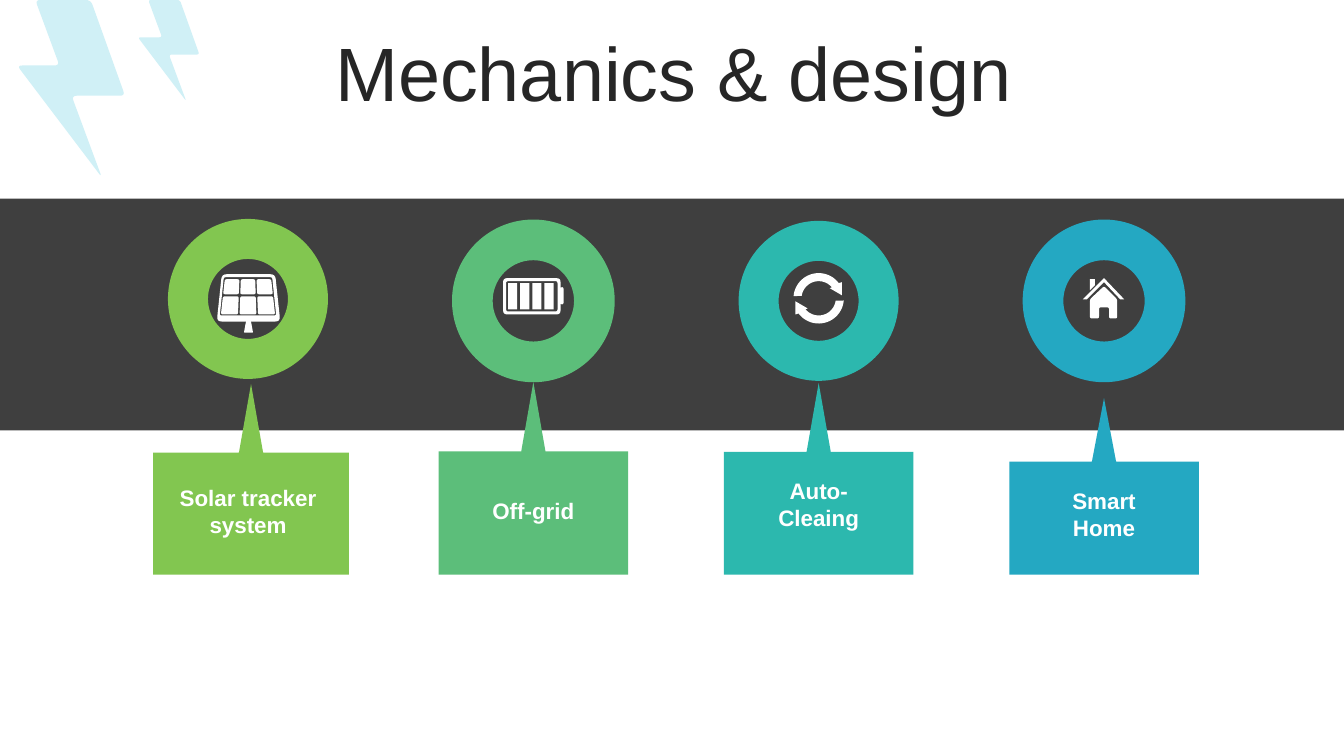
from math import cos, dist, radians, sin

from lxml import etree
from pptx import Presentation
from pptx.chart.data import CategoryChartData
from pptx.dml.color import RGBColor
from pptx.enum.chart import XL_CHART_TYPE
from pptx.enum.shapes import MSO_SHAPE
from pptx.enum.text import MSO_ANCHOR, MSO_AUTO_SIZE, PP_ALIGN
from pptx.oxml.ns import qn
from pptx.util import Inches, Pt

RING = XL_CHART_TYPE.DOUGHNUT
RECT = MSO_SHAPE.RECTANGLE
MIDDLE = MSO_ANCHOR.MIDDLE
GROW = MSO_AUTO_SIZE.SHAPE_TO_FIT_TEXT
CENTER = PP_ALIGN.CENTER

COLORS = {
    "bolt": "D0F0F6", "ink": "262626", "band": "3F3F3F", "white": "FFFFFF",
    "gray": "BFBFBF", "black": "000000", "lime": "82C650", "green": "5CBE7A",
    "teal": "2CB8AE", "blue": "24A8C2",
}
STEP = 2.83
FLOOR = 5.7


def put(target, values):
    for name, value in values.items():
        setattr(target, name, value)


def box(left, top, right, bottom):
    return [(left, top), (right, top), (right, bottom), (left, bottom)]


def bend(points, size):
    if not size:
        return points
    curve = []
    for i, (x, y) in enumerate(points):
        ends = []
        for px, py in (points[i - 1], points[(i + 1) % len(points)]):
            gap = dist((x, y), (px, py))
            part = min(size, gap / 2) / gap
            ends.append((x + (px - x) * part, y + (py - y) * part))
        (ax, ay), (bx, by) = ends
        for k in range(5):
            t = k / 4
            s = 1 - t
            curve.append((s * s * ax + 2 * s * t * x + t * t * bx,
                          s * s * ay + 2 * s * t * y + t * t * by))
    return curve


class Deck:
    font = "Arial"

    def __init__(self, show):
        self.slide = show.slides.add_slide(show.slide_layouts[6])
        self.shapes = self.slide.shapes

    def color(self, name):
        return RGBColor.from_string(COLORS[name])

    def paint(self, shape, name):
        shape.shadow.inherit = False
        shape.fill.solid()
        shape.fill.fore_color.rgb = self.color(name)
        shape.line.fill.background()

    def band(self, left, top, width, height, name):
        shape = self.shapes.add_shape(
            RECT, Inches(left), Inches(top), Inches(width), Inches(height))
        self.paint(shape, name)

    def outline(self, loops, name):
        pen = None
        for points, size in loops:
            spots = [(Inches(x), Inches(y)) for x, y in bend(points, size)]
            if pen:
                pen.move_to(*spots[0])
            else:
                pen = self.shapes.build_freeform(*spots[0])
            pen.add_line_segments(spots[1:], close=True)
        self.paint(pen.convert_to_shape(), name)

    def text(self, words, left, top, width, height, size, name, bold=False,
             form=None, frame=None):
        area = self.shapes.add_textbox(
            Inches(left), Inches(top), Inches(width), Inches(height)).text_frame
        put(area, {"word_wrap": True, "vertical_anchor": MIDDLE, **(frame or {})})
        line = area.paragraphs[0]
        put(line, {"alignment": CENTER, **(form or {})})
        run = line.add_run()
        run.text = words
        put(run.font, {"name": self.font, "size": Pt(size), "bold": bold})
        run.font.color.rgb = self.color(name)

    def ring(self, left, name, inset):
        data = CategoryChartData()
        data.categories = ["1", "2", "3"]
        data.add_series("Series 1", (100, 0, 0))
        chart = self.shapes.add_chart(
            RING, Inches(left), Inches(2.04), Inches(1.94), Inches(1.89), data).chart
        put(chart, {"has_legend": False, "has_title": False})
        put(chart.font, {"name": self.font, "size": Pt(18)})
        chart.font.color.rgb = self.color("black")
        plot = chart.plots[0]
        plot.vary_by_categories = True
        for i, shade in enumerate((name, "white", "gray")):
            part = plot.series[0].points[i].format
            part.fill.solid()
            part.fill.fore_color.rgb = self.color(shade)
            part.line.fill.background()
        root = chart.element
        root.find(".//" + qn("c:holeSize")).set("val", "69")
        if inset:
            area = root.find(".//" + qn("c:plotArea"))
            for old in area.findall(qn("c:layout")):
                area.remove(old)
            layout = etree.Element(qn("c:layout"))
            area.insert(0, layout)
            manual = etree.SubElement(layout, qn("c:manualLayout"))
            values = {"layoutTarget": "inner", "xMode": "edge", "yMode": "edge",
                      "x": 0.09, "y": inset, "w": 0.82, "h": 0.84}
            for key, value in values.items():
                etree.SubElement(manual, qn("c:" + key)).set("val", str(value))

    def label(self, mid, tip, width, name):
        half, neck = width / 2, tip + 0.36 * (FLOOR - tip)
        points = [(mid + half, FLOOR), (mid - half, FLOOR), (mid - half, neck),
                  (mid - 0.12, neck), (mid, tip), (mid + 0.12, neck),
                  (mid + half, neck)]
        self.outline([(points, 0)], name)


def solar():
    loops = [
        ([(2.2, 2.72), (2.73, 2.72), (2.78, 3.19), (2.15, 3.19)], 0.05),
        ([(2.22, 2.75), (2.7, 2.75), (2.74, 3.13), (2.18, 3.13)], 0.02),
        ([(2.44, 3.19), (2.49, 3.19), (2.51, 3.3), (2.42, 3.3)], 0.01),
    ]
    for top, low in ((2.77, 2.92), (2.94, 3.12)):
        for a, b in ((-1, -0.37), (-0.31, 0.31), (0.37, 1)):
            cell = [(2.46 + (0.23 + 0.11 * (y - 2.77)) * u, y)
                    for u, y in ((a, top), (b, top), (b, low), (a, low))]
            loops.append((cell, 0.02))
    return loops


def power():
    bars = [(box(x, 2.81, x + 0.09, 3.07), 0)
            for x in (5.04 + 0.12 * i for i in range(4))]
    return [(box(4.99, 2.76, 5.56, 3.12), 0.04),
            (box(5.02, 2.79, 5.53, 3.09), 0.02),
            (box(5.56, 2.85, 5.59, 3.02), 0.02), *bars]


def cycle():
    outer = [(0.25 * cos(radians(a)), 0.25 * sin(radians(a)))
             for a in range(185, 325, 6)]
    inner = [(0.17 * cos(radians(a)), 0.17 * sin(radians(a)))
             for a in range(320, 184, -6)]
    arrow = outer + [(0.23, -0.16), (0.23, -0.03), (0.11, -0.1)] + inner
    return [([(8.12 + s * x, 2.96 + s * y) for x, y in arrow], 0) for s in (1, -1)]


def home():
    wall = [(10.95, 2.84), (11.08, 2.97), (11.08, 3.16), (11, 3.16), (11, 3.05),
            (10.9, 3.05), (10.9, 3.16), (10.81, 3.16), (10.81, 2.97)]
    roof = [(10.95, 2.76), (11.15, 2.97), (11.11, 2.97), (10.95, 2.8),
            (10.78, 2.97), (10.74, 2.97)]
    stack = [(10.81, 2.77), (10.86, 2.77), (10.86, 2.83), (10.81, 2.88)]
    return [(wall, 0.02), (roof, 0), (stack, 0)]


def main():
    show = Presentation()
    put(show, {"slide_width": Inches(13.33), "slide_height": Inches(7.5)})
    deck = Deck(show)

    bolt = [(0.35, 0), (0.9, 0), (1.24, 0.95), (0.71, 0.95), (1.01, 1.76),
            (0.17, 0.65), (0.59, 0.65)]
    for left, scale in ((0.19, 1), (1.38, 0.57)):
        points = [(left + (x - 0.19) * scale, y * scale) for x, y in bolt]
        deck.outline([(points, 0.05 * scale)], "bolt")

    deck.text("Mechanics & design", 0.35, 0.37, 12.66, 0.79, 54, "ink",
              form={"line_spacing": 0.9, "space_before": Pt(10)})
    deck.band(0, 1.97, 13.33, 2.3, "band")

    items = [
        ("Solar tracker system", "lime", 0.07, 3.81, 1.94, 2.19, 5.07, 0.64, solar),
        ("Off-grid", "green", None, 3.79, 1.88, 1.37, 5.07, 0.37, power),
        ("Auto-Cleaing", "teal", 0.08, 3.8, 1.88, 1.37, 5, 0.64, cycle),
        ("Smart Home", "blue", None, 3.95, 1.88, 1.37, 5.1, 0.64, home),
    ]
    for i, (words, name, inset, tip, width, span, row, tall, icon) in enumerate(items):
        deck.ring(1.49 + STEP * i, name, inset)
        deck.label(2.46 + STEP * i + (0.03 if i == 0 else 0), tip, width, name)
        deck.text(words, 2.46 + STEP * i - span / 2, row - tall / 2, span, tall, 16,
                  "white", True, frame={"auto_size": GROW})
        deck.outline(icon(), "white")

    show.save("out.pptx")


if __name__ == "__main__":
    main()
